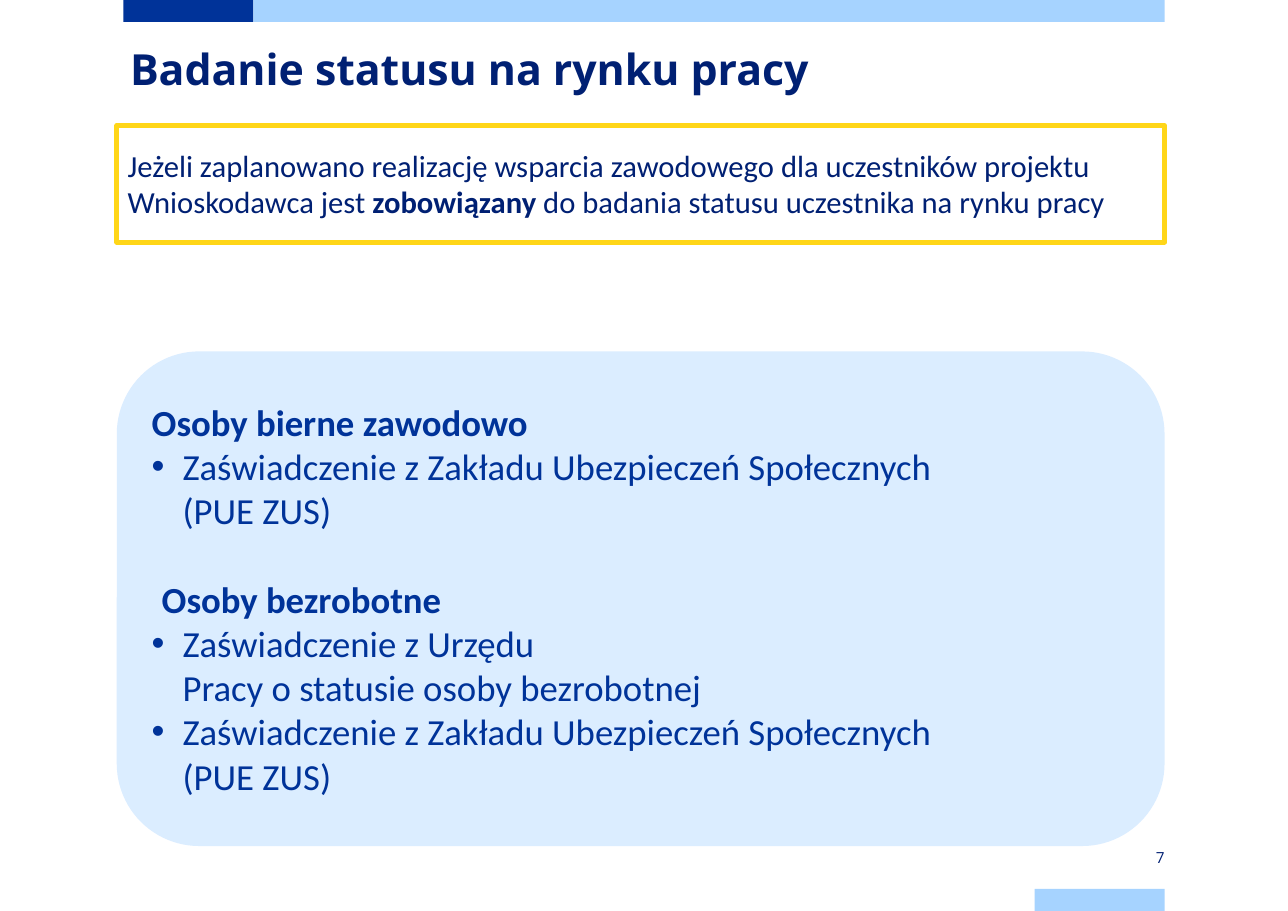
from dataclasses import dataclass

from lxml import etree
from pptx import Presentation
from pptx.dml.color import RGBColor
from pptx.enum.shapes import MSO_SHAPE
from pptx.enum.text import MSO_ANCHOR, MSO_AUTO_SIZE, PP_ALIGN
from pptx.oxml.ns import qn
from pptx.util import Inches, Pt

RECT, ROUND = MSO_SHAPE.RECTANGLE, MSO_SHAPE.ROUNDED_RECTANGLE
TOP, MIDDLE = MSO_ANCHOR.TOP, MSO_ANCHOR.MIDDLE
LEFT, RIGHT = PP_ALIGN.LEFT, PP_ALIGN.RIGHT

# Content
TITLE = "Badanie statusu na rynku pracy"
PAGE = "7"
RULE = [
    ("Jeżeli zaplanowano realizację wsparcia zawodowego dla uczestników "
     "projektu Wnioskodawca jest ", False),
    ("zobowiązany", True),
    (" do badania statusu uczestnika na rynku pracy", False),
]
ZUS = ["Zaświadczenie z Zakładu Ubezpieczeń Społecznych", "(PUE ZUS)"]
OFFICE = ["Zaświadczenie z Urzędu", "Pracy o statusie osoby bezrobotnej"]
GROUPS = [  # heading, left indent, bullets as lists of lines
    ("Osoby bierne zawodowo", 0, [ZUS]),
    ("Osoby bezrobotne", 0.09, [OFFICE, ZUS]),
]


@dataclass
class Theme:
    navy: str = "002073"
    blue: str = "003399"
    sky: str = "A6D3FF"
    pale: str = "DBEDFF"
    gold: str = "FFD618"
    head: str = "Open Sans"
    body: str = "Calibri"
    title: int = 28
    rule: int = 20
    list: int = 24
    page: int = 10
    gap: float = 29.3  # one line of list text


T = Theme()
EDGE, WIDE = 1.06, 9.51
END = EDGE + WIDE
BAR, TAB = 0.2, 1.18
HANG = 0.28

prs = Presentation()
prs.slide_width, prs.slide_height = Inches(11.69), Inches(8.27)
slide = prs.slides.add_slide(prs.slide_layouts[5])


def place(x, y, w, h):
    return [Inches(v) for v in (x, y, w, h)]


def add_box(kind, spot, fill=None, line=None):
    box = slide.shapes.add_shape(kind, *place(*spot))
    box.shadow.inherit = False
    if fill:
        box.fill.solid()
        box.fill.fore_color.rgb = RGBColor.from_string(fill)
    else:
        box.fill.background()
    if line:
        box.line.color.rgb = RGBColor.from_string(line)
        box.line.width = Pt(3)
    else:
        box.line.fill.background()
    return box


def set_frame(shape, anchor, insets):
    frame = shape.text_frame
    frame.word_wrap = True
    frame.auto_size = MSO_AUTO_SIZE.NONE
    frame.vertical_anchor = anchor
    (frame.margin_left, frame.margin_top,
     frame.margin_right, frame.margin_bottom) = place(*insets)
    return frame


def add_run(para, text, size, color, face=T.body, bold=False):
    run = para.add_run()
    run.text = text
    font = run.font
    font.name, font.size, font.bold = face, Pt(size), bold
    font.color.rgb = RGBColor.from_string(color)


def indent(para, left, hang=0, bullet=None):
    props = para._p.get_or_add_pPr()
    props.set("marL", str(Inches(left)))
    props.set("indent", str(Inches(-hang)))
    if bullet:
        etree.SubElement(props, qn("a:buFont"), typeface="Arial")
        etree.SubElement(props, qn("a:buChar"), char=bullet)


# Page bands
tab_x = END - TAB
add_box(RECT, (1.12, 0, TAB, BAR), T.blue)
add_box(RECT, (2.3, 0, END - 2.3, BAR), T.sky)
add_box(RECT, (tab_x, 8.07, TAB, BAR), T.sky)

# Page number
page = slide.shapes.add_textbox(*place(tab_x, 7.68, TAB, BAR))
para = set_frame(page, MIDDLE, (0, 0.08, 0, 0.08)).paragraphs[0]
para.alignment = RIGHT
add_run(para, PAGE, T.page, T.navy, T.head)

# Title
title = slide.shapes.title
title.left, title.top, title.width, title.height = place(1.18, 0.35, 9.45, 1.18)
para = set_frame(title, TOP, (0, 0, 0, 0)).paragraphs[0]
para.alignment, para.line_spacing = LEFT, Pt(36)
add_run(para, TITLE, T.title, T.navy, T.head, True)

# Framed rule
rule = add_box(RECT, (EDGE, 1.14, WIDE, 1.06), line=T.gold)
para = set_frame(rule, TOP, (0.1, 0.19, 0.1, 0.05)).paragraphs[0]
para.alignment = LEFT
for text, bold in RULE:
    add_run(para, text, T.rule, T.navy, bold=bold)

# Panel with the groups
panel = add_box(ROUND, (EDGE, 3.19, WIDE, 4.49), T.pale)
frame = set_frame(panel, MIDDLE, (0.1, 0.05, 0.1, 0.05))
for n, (name, left, items) in enumerate(GROUPS):
    para = frame.add_paragraph() if n else frame.paragraphs[0]
    para.alignment = LEFT
    indent(para, left)
    if n:
        para.space_before = Pt(T.gap)
    add_run(para, name, T.list, T.blue, bold=True)
    for lines in items:
        para = frame.add_paragraph()
        para.alignment = LEFT
        indent(para, HANG, HANG, "•")
        for k, text in enumerate(lines):
            if k:
                para.add_line_break()
            add_run(para, text, T.list, T.blue)

prs.save("out.pptx")
